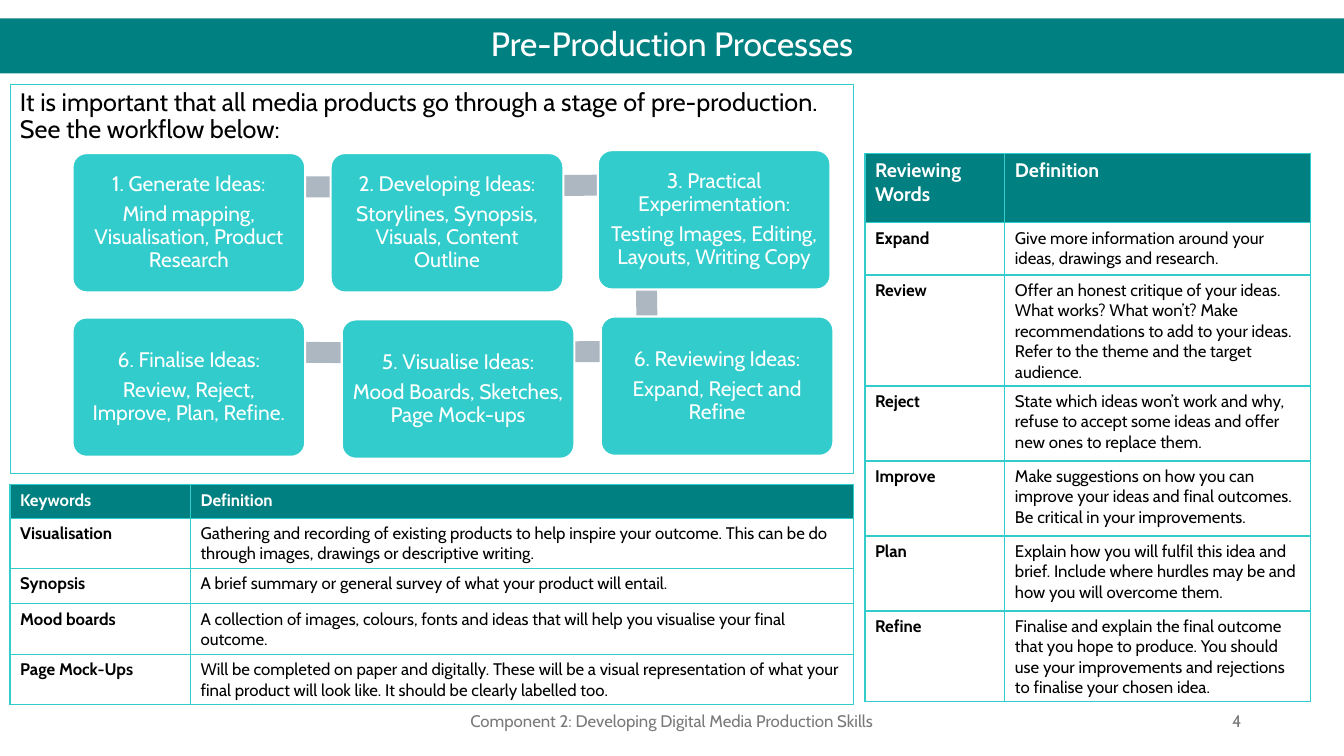
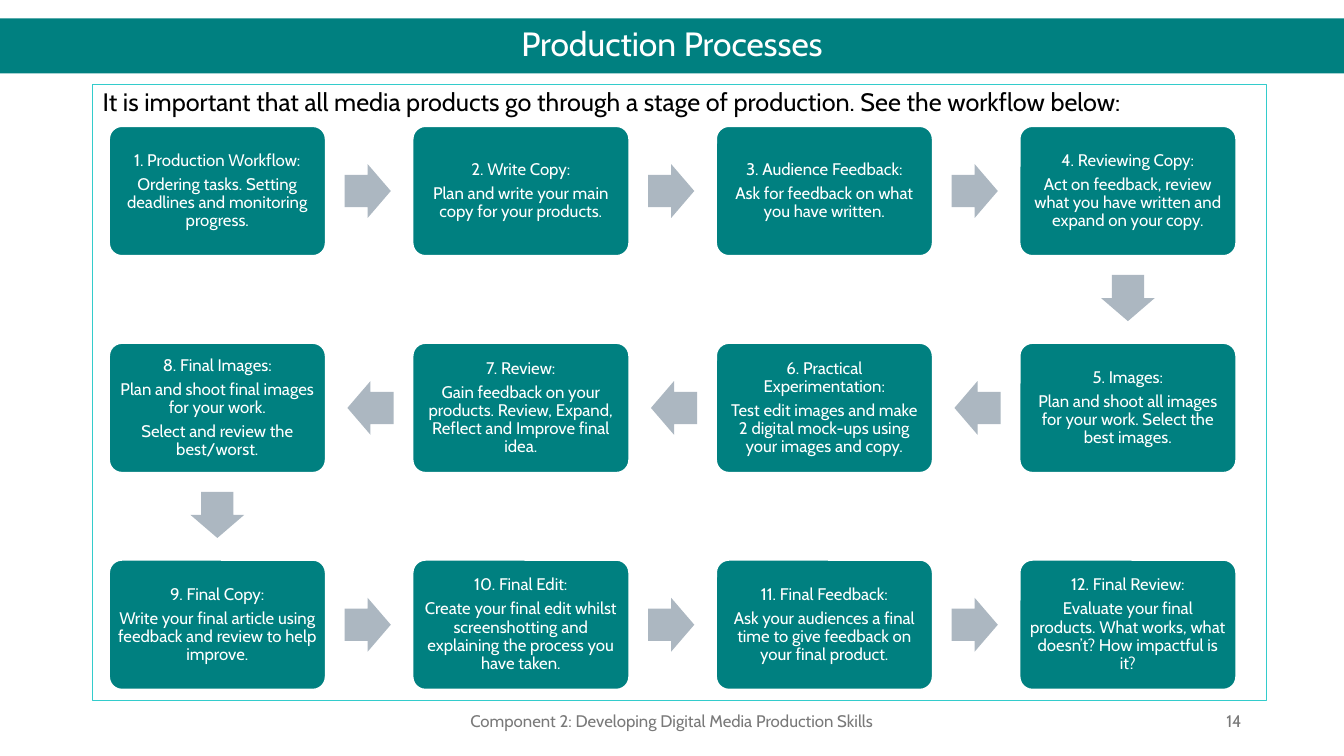
from dataclasses import dataclass
from itertools import pairwise
from math import atan2, cos, degrees, sin
from typing import NamedTuple

from lxml.etree import SubElement as SubEl
from pptx import Presentation
from pptx.dml.color import RGBColor as Rgb
from pptx.enum.shapes import MSO_SHAPE as Form
from pptx.enum.text import MSO_ANCHOR as Anchor, PP_ALIGN as Align
from pptx.oxml.ns import qn
from pptx.shapes.autoshape import Shape
from pptx.slide import Slide
from pptx.table import _Cell as Cell
from pptx.text.text import TextFrame
from pptx.util import Pt

FONT = "Cabin"
TEAL, AQUA, STEEL = "008080", "33CCCC", "ACB7C1"
WHITE, BLACK, GREY = "FFFFFF", "000000", "797979"
WIDE, HIGH = 960, 540
FOOT = "Component 2: Developing Digital Media Production Skills"


class Area(NamedTuple):
    x: float
    y: float
    w: float
    h: float

    def mid(self) -> tuple[float, float]:
        return self.x + self.w / 2, self.y + self.h / 2


class Bar(NamedTuple):
    x: float
    y: float
    span: float
    turn: float


@dataclass
class Step:
    head: str
    notes: list[str]


@dataclass
class Style:
    size: float
    tint: str = WHITE
    align: Align = Align.LEFT
    bold: bool = False
    space: float | None = None
    after: float | None = None


@dataclass
class Grid:
    x: float
    y: float
    cols: list[float]
    rows: list[float]
    head: float
    cells: list[tuple[str, str]]


def hue(code: str) -> Rgb:
    return Rgb.from_string(code)


def write(frame: TextFrame, lines: list[str], style: Style) -> None:
    frame.word_wrap = True
    for i, line in enumerate(lines):
        para = frame.add_paragraph() if i else frame.paragraphs[0]
        para.text = line
        para.alignment = style.align
        if style.space:
            para.line_spacing = style.space
        if style.after:
            para.space_after = Pt(style.after)
        font = para.font
        font.name, font.size, font.bold = FONT, Pt(style.size), style.bold
        font.color.rgb = hue(style.tint)


def draw(slide: Slide, form: Form, area: Area, fill: str | None = None,
         line: str | None = None, width: float = 0.75, turn: float = 0) -> Shape:
    shape = slide.shapes.add_shape(form, *map(Pt, area))
    shape.shadow.inherit = False
    shape.rotation = turn
    if fill:
        shape.fill.solid()
        shape.fill.fore_color.rgb = hue(fill)
    else:
        shape.fill.background()
    if line:
        shape.line.color.rgb = hue(line)
        shape.line.width = Pt(width)
    else:
        shape.line.fill.background()
    return shape


def label(slide: Slide, area: Area, text: str, align: Align) -> None:
    frame = slide.shapes.add_textbox(*map(Pt, area)).text_frame
    frame.vertical_anchor = Anchor.MIDDLE
    write(frame, [text], Style(12, GREY, align))


def base(slide: Slide, title: str, lead: str, area: Area, page: int) -> None:
    band = draw(slide, Form.RECTANGLE, Area(0, 13.2, WIDE, 39.2), TEAL)
    band.text_frame.vertical_anchor = Anchor.MIDDLE
    write(band.text_frame, [title], Style(24, align=Align.CENTER, space=0.9))
    body = draw(slide, Form.RECTANGLE, area, line=AQUA)
    body.text_frame.vertical_anchor = Anchor.TOP
    write(body.text_frame, [lead], Style(18, BLACK, space=0.9))
    label(slide, Area(318, 500.4, 324, 28.8), FOOT, Align.CENTER)
    label(slide, Area(678, 500.4, 216, 28.8), str(page), Align.RIGHT)


def card(slide: Slide, area: Area, step: Step, fill: str, size: float) -> None:
    shape = draw(slide, Form.ROUNDED_RECTANGLE, area, fill, WHITE, 1.5)
    shape.adjustments[0] = 0.1
    frame = shape.text_frame
    frame.vertical_anchor = Anchor.MIDDLE
    frame.margin_left = frame.margin_right = Pt(size * 0.3)
    frame.margin_top = frame.margin_bottom = Pt(size * 0.3)
    style = Style(size, align=Align.CENTER, space=0.9, after=size * 0.35)
    write(frame, [step.head, *step.notes], style)


def arrow(slide: Slide, start: Area, end: Area) -> None:
    (ax, ay), (bx, by) = start.mid(), end.mid()
    turn = atan2(by - ay, bx - ax)
    x, y = (ax + bx) / 2 - cos(turn), (ay + by) / 2 - sin(turn)
    wide, high = 33, 38.4
    area = Area(x - wide / 2, y - high / 2, wide, high)
    shape = draw(slide, Form.RIGHT_ARROW, area, STEEL, turn=degrees(turn))
    shape.adjustments[0], shape.adjustments[1] = 0.6, 0.5


def edge(cell: Cell) -> None:
    props = cell._tc.get_or_add_tcPr()
    for i, side in enumerate(("lnL", "lnR", "lnT", "lnB")):
        line = props.makeelement(qn(f"a:{side}"), {"w": str(Pt(1))})
        fill = SubEl(line, qn("a:solidFill"))
        SubEl(fill, qn("a:srgbClr"), val=AQUA)
        props.insert(i, line)


def table(slide: Slide, grid: Grid) -> None:
    area = Area(grid.x, grid.y, sum(grid.cols), sum(grid.rows))
    tab = slide.shapes.add_table(
        len(grid.rows), len(grid.cols), *map(Pt, area)).table
    tab.first_row = tab.horz_banding = False
    for col, wide in zip(tab.columns, grid.cols):
        col.width = Pt(wide)
    for r, (row, high) in enumerate(zip(tab.rows, grid.rows)):
        row.height = Pt(high)
        for c, cell in enumerate(row.cells):
            if r == 0:
                cell.fill.solid()
                cell.fill.fore_color.rgb = hue(TEAL)
                style = Style(grid.head, bold=True)
            else:
                cell.fill.background()
                style = Style(12, BLACK, bold=c == 0)
            edge(cell)
            write(cell.text_frame, [grid.cells[r][c]], style)


PLAN = [
    (51.8, 109.4, Step("1. Generate Ideas:", ["Mind mapping, Visualisation, Product Research"])),
    (236.2, 109.4, Step("2. Developing Ideas:", ["Storylines, Synopsis, Visuals, Content Outline"])),
    (427, 107.3, Step("3. Practical Experimentation:", ["Testing Images, Editing, Layouts, Writing Copy"])),
    (429.1, 226.1, Step("6. Reviewing Ideas:", ["Expand, Reject and Refine"])),
    (244.1, 228.2, Step("5. Visualise Ideas:", ["Mood Boards, Sketches, Page Mock-ups"])),
    (51.8, 226.8, Step("6. Finalise Ideas:", ["Review, Reject, Improve, Plan, Refine."])),
]

BARS = [
    Bar(85.7, 126, 183.6, 0),
    Bar(270, 125.3, 190, 359.5),
    Bar(402.5, 183.6, 118, 89.1),
    Bar(278, 244.1, 185, 179.5),
    Bar(85.7, 244.1, 192.2, 180.2),
]

TERMS = Grid(7.2, 346.3, [128.9, 473.8], [23.8, 34.6, 25.2, 34.6, 34.6], 12, [
    ("Keywords", "Definition"),
    ("Visualisation", "Gathering and recording of existing products to help inspire your outcome. "
     "This can be do through images, drawings or descriptive writing."),
    ("Synopsis", "A brief summary or general survey of what your product will entail."),
    ("Mood boards", "A collection of images, colours, fonts and ideas that will help you "
     "visualise your final outcome."),
    ("Page Mock-Ups", "Will be completed on paper and digitally. These will be a visual "
     "representation of what your final product will look like. It should be clearly labelled too."),
])

WORDS = Grid(617.8, 109.4, [100, 218.2], [49.7, 37.4, 49.7] + [53.6] * 4, 14, [
    ("Reviewing Words", "Definition"),
    ("Expand", "Give more information around your ideas, drawings and research."),
    ("Review", "Offer an honest critique of your ideas. What works? What won’t? Make "
     "recommendations to add to your ideas. Refer to the theme and the target audience."),
    ("Reject", "State which ideas won’t work and why, refuse to accept some ideas and offer "
     "new ones to replace them."),
    ("Improve", "Make suggestions on how you can improve your ideas and final outcomes. "
     "Be critical in your improvements."),
    ("Plan", "Explain how you will fulfil this idea and brief. Include where hurdles may be "
     "and how you will overcome them."),
    ("Refine", "Finalise and explain the final outcome that you hope to produce. You should "
     "use your improvements and rejections to finalise your chosen idea."),
])

FLOW = [
    Step("1. Production Workflow:", ["Ordering tasks. Setting deadlines and monitoring progress."]),
    Step("2. Write Copy:", ["Plan and write your main copy for your products."]),
    Step("3. Audience Feedback:", ["Ask for feedback on what you have written."]),
    Step("4. Reviewing Copy:", ["Act on feedback, review what you have written and expand on your copy."]),
    Step("5. Images:", ["Plan and shoot all images for your work. Select the best images."]),
    Step("6. Practical Experimentation:", ["Test edit images and make 2 digital mock-ups using your images and copy."]),
    Step("7. Review:", ["Gain feedback on your products. Review, Expand, Reflect and Improve final idea."]),
    Step("8. Final Images:", ["Plan and shoot final images for your work.", "Select and review the best/worst."]),
    Step("9. Final Copy:", ["Write your final article using feedback and review to help improve."]),
    Step("10. Final Edit:", ["Create your final edit whilst screenshotting and explaining the process you have taken."]),
    Step("11. Final Feedback:", ["Ask your audiences a final time to give feedback on your final product."]),
    Step("12. Final Review:", ["Evaluate your final products. What works, what doesn’t? How impactful is it?"]),
]


def early(slide: Slide) -> None:
    base(slide, "Pre-Production Processes",
         "It is important that all media products go through a stage of pre-production. "
         "See the workflow below:", Area(7.2, 60.5, 602.6, 278), 4)
    for bar in BARS:
        area = Area(bar.x, bar.y, bar.span, 15)
        draw(slide, Form.RECTANGLE, area, STEEL, turn=bar.turn)
    for x, y, step in PLAN:
        card(slide, Area(x, y, 166.2, 99.5), step, AQUA, 15)
    table(slide, TERMS)
    table(slide, WORDS)


def place(i: int, cols: int = 4) -> Area:
    row, col = divmod(i, cols)
    if row % 2:
        col = cols - 1 - col
    return Area(77.8 + col * 216.8, 90 + row * 154.9, 154.9, 92.9)


def later(slide: Slide) -> None:
    base(slide, "Production Processes",
         "It is important that all media products go through a stage of production. "
         "See the workflow below:", Area(66.2, 60.5, 838.8, 440), 14)
    areas = [place(i) for i in range(len(FLOW))]
    for area, step in zip(areas, FLOW):
        card(slide, area, step, TEAL, 12)
    for start, end in pairwise(areas):
        arrow(slide, start, end)


def main() -> None:
    deck = Presentation()
    deck.slide_width, deck.slide_height = Pt(WIDE), Pt(HIGH)
    for build in (early, later):
        build(deck.slides.add_slide(deck.slide_layouts[6]))
    deck.save("out.pptx")


if __name__ == "__main__":
    main()
